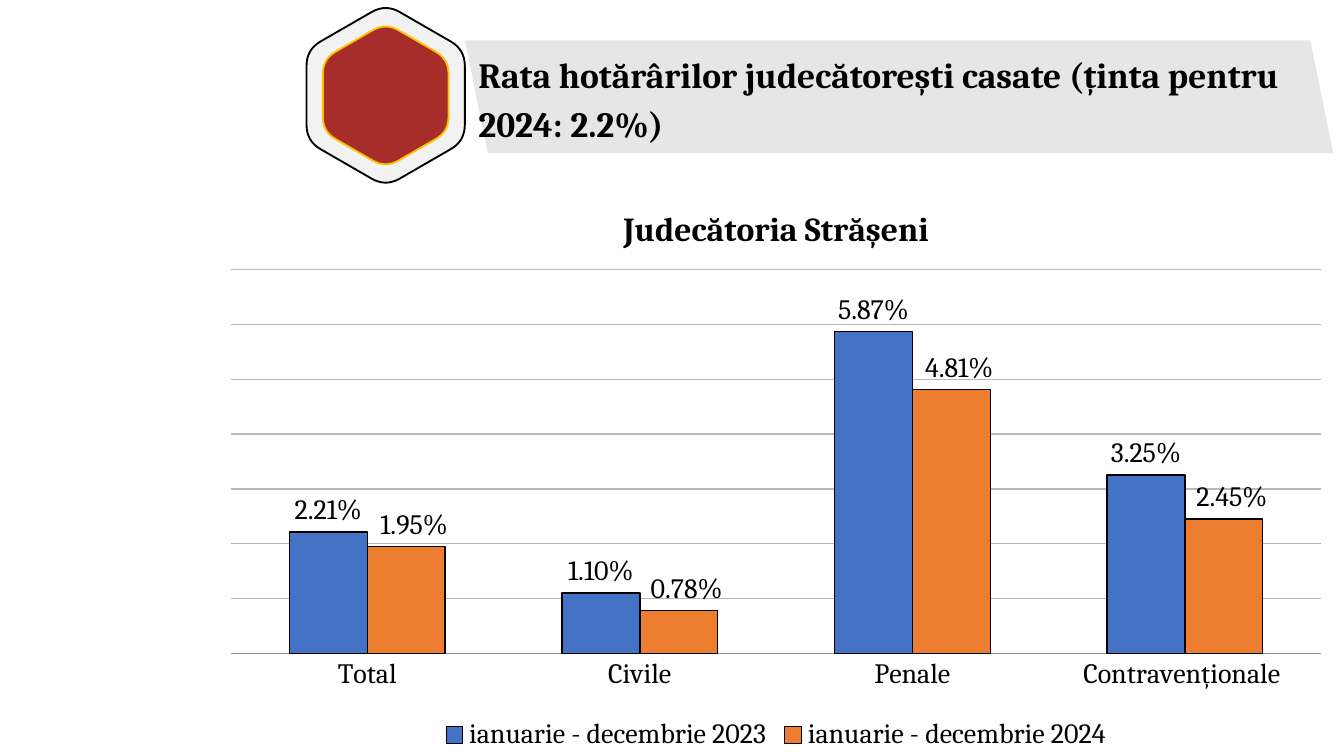
import math
from dataclasses import dataclass

from lxml import etree
from pptx import Presentation
from pptx import util as u
from pptx.chart.data import CategoryChartData
from pptx.dml.color import RGBColor
from pptx.enum import chart as ch
from pptx.enum import text
from pptx.oxml.ns import qn

FONT = "Cambria"
BLACK = RGBColor(0x00, 0x00, 0x00)
PALE = RGBColor(0xF2, 0xF2, 0xF2)
RED = RGBColor(0xA7, 0x2D, 0x2A)
GOLD = RGBColor(0xFF, 0xC0, 0x00)
BANNER = RGBColor(0xE6, 0xE6, 0xE6)
GRID = RGBColor(0xB7, 0xB7, 0xB7)
AXIS = RGBColor(0x8C, 0x8C, 0x8C)
BLUE = RGBColor(0x44, 0x72, 0xC4)
ORANGE = RGBColor(0xED, 0x7D, 0x31)

Point = tuple[float, float]


@dataclass(frozen=True)
class Hexagon:
    radius: float
    cut: float  # length of each side taken by a rounded corner
    fill: RGBColor
    line: RGBColor


@dataclass(frozen=True)
class Series:
    name: str
    values: tuple[float, ...]
    color: RGBColor
    label_shift: float = 0  # share of the chart's width


BADGE_CENTER = (2.87, 0.71)
BADGE = (Hexagon(0.68, 0.12, PALE, BLACK), Hexagon(0.54, 0.11, RED, GOLD))
CATEGORIES = ("Total", "Civile", "Penale", "Contravenționale ")
SERIES = (
    Series("ianuarie - decembrie 2023", (0.0221, 0.011, 0.0587, 0.0325), BLUE),
    Series("ianuarie - decembrie 2024", (0.0195, 0.0078, 0.0481, 0.0245), ORANGE, 0.007),
)


def draw_outline(slide, points: list[Point], fill: RGBColor, line: RGBColor | None = None) -> None:
    corners = [(u.Inches(x), u.Inches(y)) for x, y in points]
    builder = slide.shapes.build_freeform(*corners[0])
    builder.add_line_segments(corners[1:], close=True)
    sp = builder.convert_to_shape()
    sp.shadow.inherit = False
    sp.fill.solid()
    sp.fill.fore_color.rgb = fill
    if line is None:
        sp.line.fill.background()
    else:
        sp.line.color.rgb = line
        sp.line.width = u.Pt(1)


def rounded_hexagon(center: Point, radius: float, cut: float, steps: int = 8) -> list[Point]:
    """Six corners, each replaced by a sampled quadratic curve."""
    corners = [(center[0] + radius * math.sin(k * math.pi / 3),
                center[1] - radius * math.cos(k * math.pi / 3)) for k in range(6)]
    share = cut / radius
    points = []
    for k, corner in enumerate(corners):
        before, after = corners[k - 1], corners[(k + 1) % 6]
        for i in range(steps + 1):
            t = i / steps
            a, b = share * (1 - t) ** 2, share * t ** 2
            points.append(tuple(c + a * (p - c) + b * (n - c)
                                for p, c, n in zip(before, corner, after)))
    return points


def style_font(font, size: float, bold: bool = False) -> None:
    font.name = FONT
    font.size = u.Pt(size)
    font.bold = bold
    font.color.rgb = BLACK


def place_title(slide, wording: str) -> None:
    title = slide.shapes.title
    slide.shapes._spTree.append(title._element)  # in front of the banner
    title.left, title.top = u.Inches(3.46), u.Inches(0.3)
    title.width, title.height = u.Inches(6.54), u.Inches(0.81)
    tf = title.text_frame
    tf.text = wording
    tf.word_wrap = True
    tf.auto_size = text.MSO_AUTO_SIZE.SHAPE_TO_FIT_TEXT
    tf.vertical_anchor = text.MSO_ANCHOR.TOP
    p = tf.paragraphs[0]
    p.alignment = text.PP_ALIGN.LEFT
    p.line_spacing = 1.15
    p.space_before, p.space_after = u.Pt(0), u.Pt(10)
    style_font(p.font, 19, bold=True)


def add_manual_layout(layout, **settings: float | str) -> None:
    manual = etree.SubElement(layout, qn("c:manualLayout"))
    for tag, value in settings.items():
        etree.SubElement(manual, qn(f"c:{tag}")).set("val", str(value))


def set_plot_area(chart, **shares: float) -> None:
    """Fix the inner plot area as shares of the chart's size."""
    plot_area = chart._chartSpace.chart.plotArea
    for old in plot_area.findall(qn("c:layout")):
        plot_area.remove(old)
    layout = etree.Element(qn("c:layout"))
    plot_area.insert(0, layout)
    add_manual_layout(layout, layoutTarget="inner", xMode="edge", yMode="edge", **shares)


def shift_labels(series, shift: float) -> None:
    for i in range(len(CATEGORIES)):
        label = series.points[i].data_label
        style_font(label.font, 15)
        label.position = ch.XL_LABEL_POSITION.OUTSIDE_END
    for label in series._element.iter(qn("c:dLbl")):
        layout = etree.Element(qn("c:layout"))
        label.insert(1, layout)
        add_manual_layout(layout, x=shift, y=0)


def draw_chart(slide, heading: str) -> None:
    data = CategoryChartData(number_format="0.00%")
    data.categories = CATEGORIES
    for s in SERIES:
        data.add_series(s.name, s.values)
    frame = slide.shapes.add_chart(
        ch.XL_CHART_TYPE.COLUMN_CLUSTERED, u.Inches(1.55), u.Inches(1.35),
        u.Inches(8.45), u.Inches(4.28), data)
    chart = frame.chart
    style_font(chart.font, 15)

    # Heading and legend
    chart.has_title = True
    chart.chart_title.include_in_layout = False
    tf = chart.chart_title.text_frame
    tf.text = heading
    style_font(tf.paragraphs[0].font, 18, bold=True)
    chart.has_legend = True
    chart.legend.position = ch.XL_LEGEND_POSITION.BOTTOM
    chart.legend.include_in_layout = False
    style_font(chart.legend.font, 15)

    # Axes
    chart.category_axis.major_tick_mark = ch.XL_TICK_MARK.NONE
    chart.category_axis.format.line.color.rgb = AXIS
    axis = chart.value_axis
    axis.visible = False
    axis.minimum_scale, axis.maximum_scale, axis.major_unit = 0, 0.07, 0.01
    axis.tick_labels.number_format = "0.00%"
    axis.tick_labels.number_format_is_linked = False
    axis.has_major_gridlines = True
    axis.major_gridlines.format.line.color.rgb = GRID
    axis.major_gridlines.format.line.width = u.Pt(0.75)

    # Columns and their labels
    plot = chart.plots[0]
    plot.gap_width, plot.overlap = 150, 0
    plot.vary_by_categories = False
    for series, s in zip(plot.series, SERIES):
        series.format.fill.solid()
        series.format.fill.fore_color.rgb = s.color
        series.format.line.color.rgb = BLACK
        series.format.line.width = u.Pt(0.75)
        labels = series.data_labels
        labels.show_value = True
        labels.number_format = "0.00%"
        labels.number_format_is_linked = False
        labels.position = ch.XL_LABEL_POSITION.OUTSIDE_END
        style_font(labels.font, 15)
        if s.label_shift:
            shift_labels(series, s.label_shift)
    set_plot_area(chart, x=0.02, y=2 / 13, w=0.96, h=2 / 3)


def main() -> None:
    prs = Presentation()
    prs.slide_width = u.Inches(10)
    prs.slide_height = prs.slide_width * 9 // 16
    slide = prs.slides.add_slide(prs.slide_layouts[5])

    # Badge and banner
    for h in BADGE:
        draw_outline(slide, rounded_hexagon(BADGE_CENTER, h.radius, h.cut), h.fill, h.line)
    draw_outline(slide, [(3.46, 0.3), (9.75, 0.3), (9.92, 1.14), (3.63, 1.14)], BANNER)

    # Title and chart
    place_title(slide, "Rata hotărârilor judecătorești casate (ținta pentru 2024: 2.2%)")
    draw_chart(slide, "Judecătoria Strășeni")
    prs.save("out.pptx")


if __name__ == "__main__":
    main()
